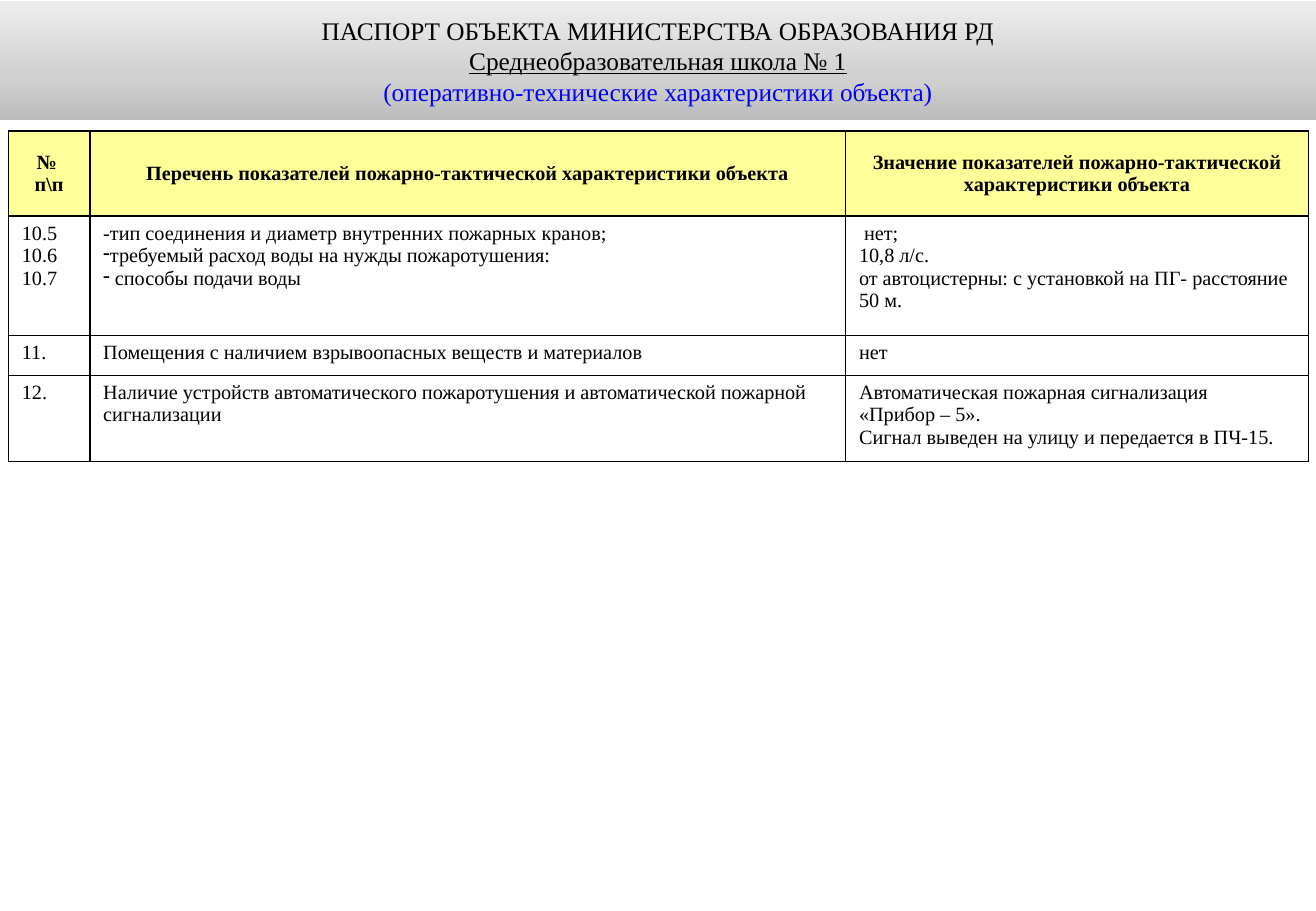
import copy
import pptx
import pptx.util
import pptx.dml.color
import pptx.enum.text
import pptx.oxml
import pptx.oxml.ns

Inches = pptx.util.Inches
Pt = pptx.util.Pt
RGBColor = pptx.dml.color.RGBColor
PP_ALIGN = pptx.enum.text.PP_ALIGN
MSO_ANCHOR = pptx.enum.text.MSO_ANCHOR
BLACK = RGBColor(0x00, 0x00, 0x00)
BLUE = RGBColor(0x00, 0x00, 0xFF)
WHITE = RGBColor(0xFF, 0xFF, 0xFF)
YELLOW = RGBColor(0xFF, 0xFF, 0x99)
BANNER_STOPS = [
    (0, RGBColor(0xBC, 0xBC, 0xBC)),
    (0.35, RGBColor(0xD0, 0xD0, 0xD0)),
    (1, RGBColor(0xED, 0xED, 0xED)),
]

HEADING = [
    ("ПАСПОРТ ОБЪЕКТА МИНИСТЕРСТВА ОБРАЗОВАНИЯ РД", BLACK, False),
    ("Среднеобразовательная школа № 1", BLACK, True),
    ("(оперативно-технические характеристики объекта)", BLUE, False),
]
COLUMN_WIDTHS = [0.67, 6.22, 3.81]
ROW_HEIGHTS = [0.7, 0.98, 0.33, 0.71]
INDICATORS = [
    [
        ["№ ", "п\\п"],
        ["Перечень показателей пожарно-тактической характеристики объекта"],
        ["Значение показателей пожарно-тактической характеристики объекта"],
    ],
    [
        ["10.5", "10.6", "10.7"],
        [
            "-тип соединения и диаметр внутренних пожарных кранов;",
            "требуемый расход воды на нужды пожаротушения:",
            " способы подачи воды",
        ],
        [" нет;", "10,8 л/с.", "от автоцистерны: с установкой на ПГ- расстояние 50 м."],
    ],
    [
        ["11."],
        ["Помещения с наличием взрывоопасных веществ и материалов"],
        ["нет"],
    ],
    [
        ["12."],
        ["Наличие устройств автоматического пожаротушения и автоматической пожарной сигнализации"],
        [
            "Автоматическая пожарная сигнализация",
            "«Прибор – 5».",
            "Сигнал выведен на улицу и передается в ПЧ-15.",
        ],
    ],
]
DASHED_CELL = (1, 1)


class PassportSlide:
    font_name = "Times New Roman"
    heading_size = Pt(15)
    table_size = Pt(12)

    def __init__(self, deck):
        self.slide = deck.slides.add_slide(deck.slide_layouts[5])

    def style(self, paragraph, size, color=BLACK, bold=False, underline=False):
        for run in paragraph.runs:
            run.font.name = self.font_name
            run.font.size = size
            run.font.color.rgb = color
            run.font.bold = bold
            run.font.underline = underline

    def heading(self, lines, left, top, width, height):
        banner = self.slide.shapes.title
        banner.left, banner.top = Inches(left), Inches(top)
        banner.width, banner.height = Inches(width), Inches(height)
        banner.fill.gradient()
        banner.fill.gradient_angle = 90
        first_stop = banner.fill._fill._gradFill.gsLst[0]
        first_stop.addnext(copy.deepcopy(first_stop))
        for stop, (position, color) in zip(banner.fill.gradient_stops, BANNER_STOPS):
            stop.position = position
            stop.color.rgb = color
        frame = banner.text_frame
        frame.word_wrap = True
        frame.auto_size = pptx.enum.text.MSO_AUTO_SIZE.NONE
        frame.vertical_anchor = MSO_ANCHOR.MIDDLE
        frame.margin_left = frame.margin_right = Inches(0.09)
        frame.text = "\n".join(text for text, _, _ in lines)
        for paragraph, (_, color, underline) in zip(frame.paragraphs, lines):
            paragraph.alignment = PP_ALIGN.CENTER
            self.style(paragraph, self.heading_size, color, underline=underline)

    def table(self, rows, left, top):
        grid = self.slide.shapes.add_table(
            len(rows), len(COLUMN_WIDTHS), Inches(left), Inches(top),
            Inches(sum(COLUMN_WIDTHS)), Inches(sum(ROW_HEIGHTS)),
        ).table
        for column, width in zip(grid.columns, COLUMN_WIDTHS):
            column.width = Inches(width)
        for row, height in zip(grid.rows, ROW_HEIGHTS):
            row.height = Inches(height)
        for r, row in enumerate(rows):
            for c, lines in enumerate(row):
                self.cell(grid.cell(r, c), lines, r == 0, (r, c) == DASHED_CELL)

    def cell(self, cell, lines, is_header, dashed):
        cell.margin_left = cell.margin_right = Inches(0.11)
        cell.margin_top = cell.margin_bottom = Inches(0.05)
        cell.vertical_anchor = MSO_ANCHOR.MIDDLE if is_header else MSO_ANCHOR.TOP
        self.borders(cell)
        cell.fill.solid()
        cell.fill.fore_color.rgb = YELLOW if is_header else WHITE
        cell.text_frame.text = "\n".join(lines)
        for index, paragraph in enumerate(cell.text_frame.paragraphs):
            paragraph.alignment = PP_ALIGN.CENTER if is_header else PP_ALIGN.LEFT
            if dashed and index > 0:
                self.dash(paragraph)
            self.style(paragraph, self.table_size, bold=is_header)

    def borders(self, cell):
        properties = cell._tc.get_or_add_tcPr()
        for side in ("lnL", "lnR", "lnT", "lnB"):
            properties.append(pptx.oxml.parse_xml(
                f'<a:{side} {pptx.oxml.ns.nsdecls("a")} w="{Pt(1)}">'
                f'<a:solidFill><a:srgbClr val="{BLACK}"/></a:solidFill></a:{side}>'
            ))

    def dash(self, paragraph):
        properties = paragraph._p.get_or_add_pPr()
        properties.set("marL", "0")
        properties.set("indent", "0")
        properties.append(pptx.oxml.parse_xml(
            f'<a:buChar {pptx.oxml.ns.nsdecls("a")} char="-"/>'
        ))


def main():
    deck = pptx.Presentation()
    deck.slide_width = Inches(10.83)
    deck.slide_height = Inches(7.5)
    passport = PassportSlide(deck)
    passport.table(INDICATORS, 0.07, 1.08)
    passport.heading(HEADING, 0, 0.01, 10.83, 0.98)
    deck.save("out.pptx")


if __name__ == "__main__":
    main()
